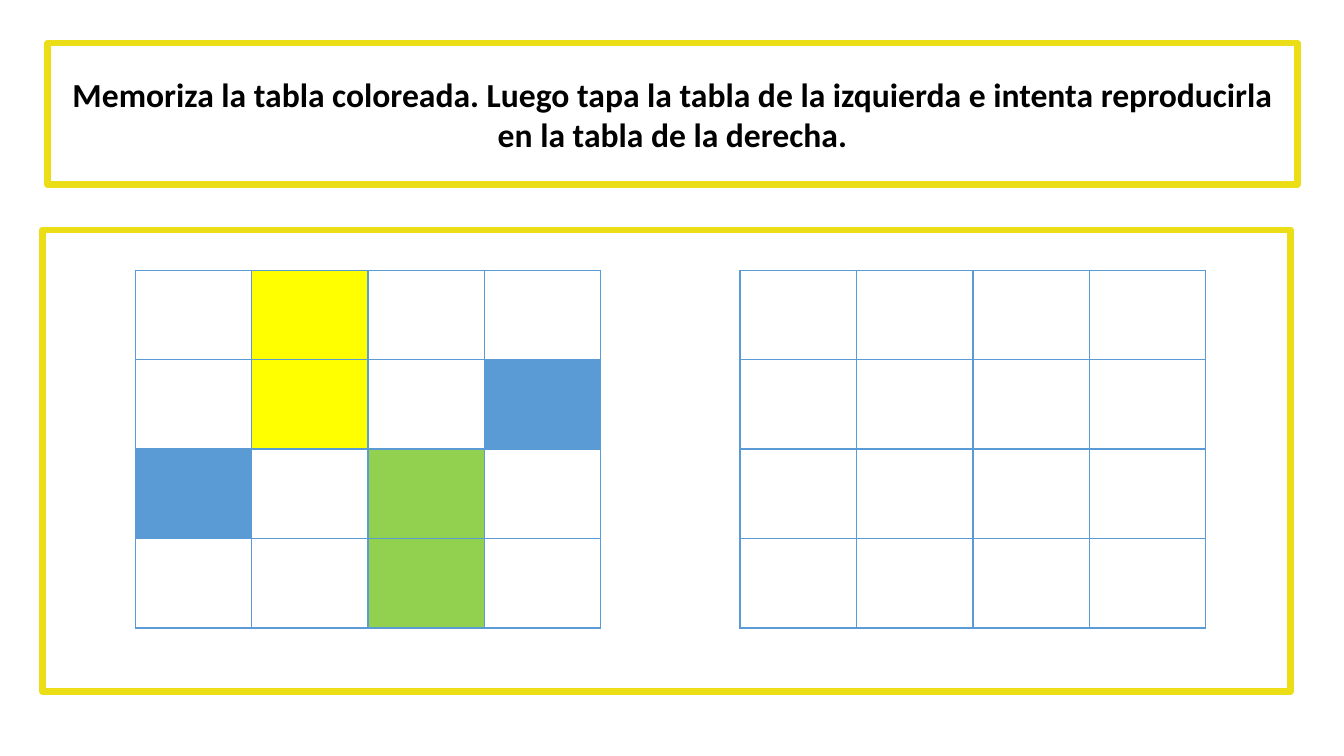
from lxml import etree
from pptx import Presentation
from pptx import util as u
from pptx.dml.color import RGBColor
from pptx.enum import shapes, text
from pptx.oxml import ns

WHITE = RGBColor(0xFF, 0xFF, 0xFF)
BLACK = RGBColor(0, 0, 0)
GOLD = RGBColor(0xEB, 0xDE, 0x17)
YELLOW = RGBColor(0xFF, 0xFF, 0)
BLUE = RGBColor(0x5B, 0x9B, 0xD5)
GREEN = RGBColor(0x92, 0xD0, 0x50)

WIDE, HIGH = 13.33, 7.5
SIZE = 4  # rows and columns of each table
TASK = ("Memoriza la tabla coloreada. Luego tapa la tabla de la izquierda "
        "e intenta reproducirla en la tabla de la derecha.")
MODEL = {(0, 1): YELLOW, (1, 1): YELLOW, (1, 3): BLUE,
         (2, 0): BLUE, (2, 2): GREEN, (3, 2): GREEN}


def add_frame(slide, box):
    frame = slide.shapes.add_shape(
        shapes.MSO_SHAPE.RECTANGLE, *map(u.Inches, box))
    frame.shadow.inherit = False
    frame.fill.solid()
    frame.fill.fore_color.rgb = WHITE
    frame.line.color.rgb = GOLD
    frame.line.width = u.Pt(4.5)
    return frame


def add_task(slide, box):
    body = add_frame(slide, box).text_frame
    body.word_wrap = True
    body.vertical_anchor = text.MSO_ANCHOR.MIDDLE
    body.text = TASK
    para = body.paragraphs[0]
    para.alignment = text.PP_ALIGN.CENTER
    font = para.runs[0].font
    font.name, font.size, font.bold = "Calibri", u.Pt(24), True
    font.color.rgb = BLACK


def add_edges(cell):
    """Draw a thin blue line on all four sides of a cell."""
    props = cell._tc.get_or_add_tcPr()
    for spot, side in enumerate(("lnL", "lnR", "lnT", "lnB")):
        edge = etree.Element(ns.qn("a:" + side), w=str(u.Pt(1)))
        fill = etree.SubElement(edge, ns.qn("a:solidFill"))
        etree.SubElement(fill, ns.qn("a:srgbClr"), val=str(BLUE))
        props.insert(spot, edge)


def add_grid(slide, box, fills):
    """Add a square table; fills maps (row, column) to a colour."""
    table = slide.shapes.add_table(SIZE, SIZE, *map(u.Inches, box)).table
    table.first_row = table.horz_banding = False
    for row in range(SIZE):
        for col in range(SIZE):
            cell = table.cell(row, col)
            cell.fill.solid()
            cell.fill.fore_color.rgb = fills.get((row, col), WHITE)
            add_edges(cell)


def add_game(slide, box):
    """Frame the model table and the empty one to its right."""
    left, top, width, height = box
    add_frame(slide, box)
    for start, fills in ((0.92, MODEL), (6.92, {})):
        add_grid(slide, (left + start, top + 0.4, 4.62, 3.55), fills)


def main():
    deck = Presentation()
    deck.slide_width, deck.slide_height = u.Inches(WIDE), u.Inches(HIGH)
    slide = deck.slides.add_slide(deck.slide_layouts[6])
    add_game(slide, (0.42, 2.28, 12.38, 4.58))
    add_task(slide, (0.47, 0.43, 12.4, 1.4))
    deck.save("out.pptx")


if __name__ == "__main__":
    main()
